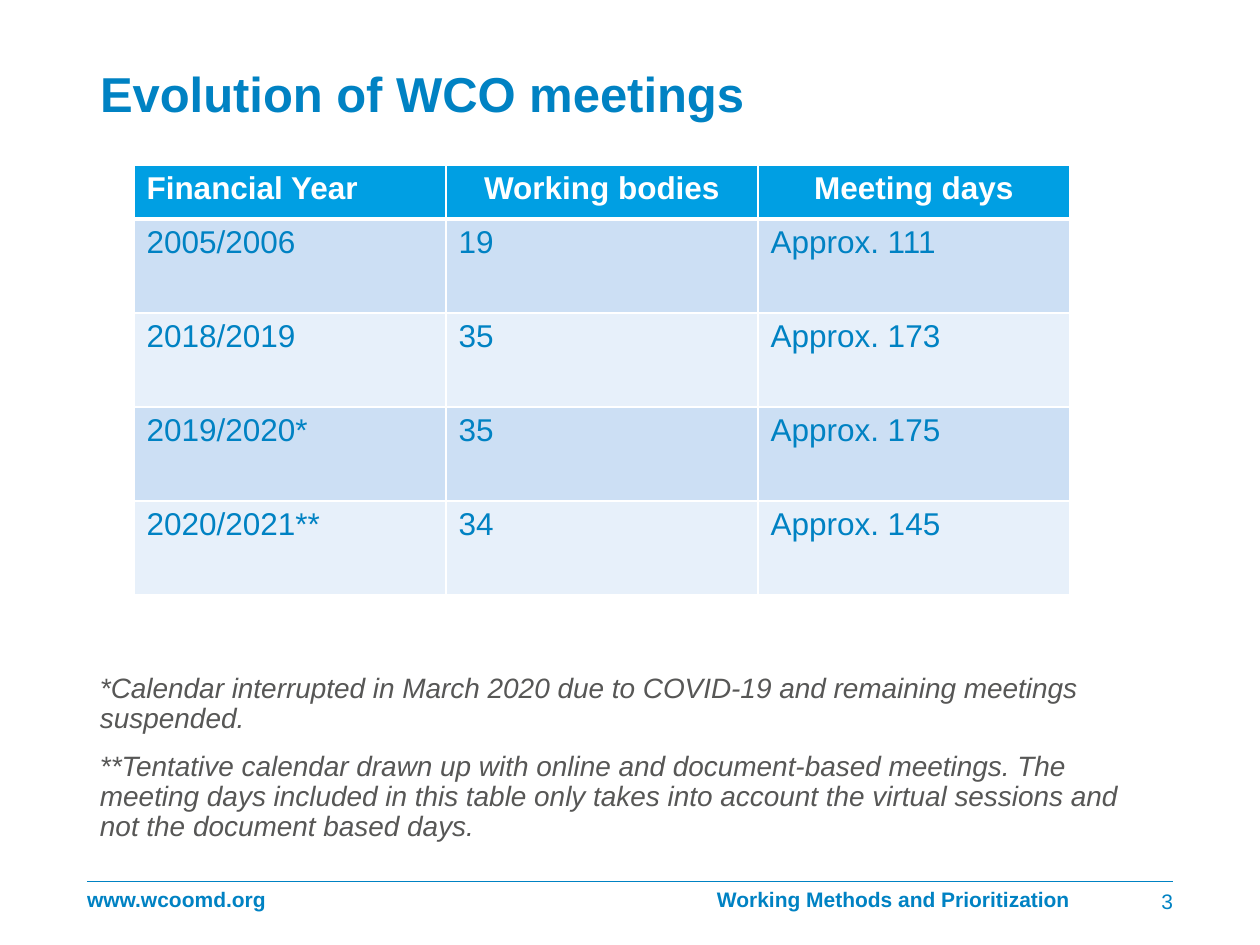
from lxml.etree import SubElement
from pptx import Presentation
from pptx.dml.color import RGBColor
from pptx.enum.shapes import MSO_CONNECTOR as Connector
from pptx.enum.text import MSO_ANCHOR as Anchor, MSO_AUTO_SIZE as AutoSize, PP_ALIGN as Align
from pptx.oxml.ns import qn
from pptx.util import Pt

SCALE = 914400 / 126
BLUE, HEADER, WHITE, GRAY = "0082C3", "009FE3", "FFFFFF", "575756"
BANDS = ["CCDFF4", "E7F0FA"]
ROWS = [
    ["Financial Year", "Working bodies", "Meeting days"],
    ["2005/2006", "19", "Approx. 111"],
    ["2018/2019", "35", "Approx. 173"],
    ["2019/2020*", "35", "Approx. 175"],
    ["2020/2021**", "34", "Approx. 145"],
]
NOTES = [
    "*Calendar interrupted in March 2020 due to COVID-19 and remaining meetings suspended.",
    "**Tentative calendar drawn up with online and document-based meetings. "
    "The meeting days included in this table only takes into account the virtual sessions "
    "and not the document based days.",
]


def px(length):
    """Turn pixels into EMU."""
    return round(length * SCALE)


def color(value):
    """Turn a hex string into a colour."""
    return RGBColor.from_string(value)


def set_values(target, values):
    """Set each attribute of the target from a dict."""
    for name, value in values.items():
        setattr(target, name, value)


def format_paragraph(paragraph, text, size, fill, align=Align.LEFT, **font):
    """Write and format one paragraph."""
    paragraph.text = text
    paragraph.alignment = align
    set_values(paragraph.font, {"name": "Arial", "size": Pt(size), "bold": False, **font})
    paragraph.font.color.rgb = color(fill)


def place_text(shape, box, lines, size, fill, anchor=Anchor.TOP, left=13, right=13,
               spacing=0.9, **style):
    """Place a text shape in its box and fill it with paragraphs."""
    set_values(shape, dict(zip(("left", "top", "width", "height"), map(px, box))))
    frame = shape.text_frame
    set_values(frame, {
        "word_wrap": True, "auto_size": AutoSize.NONE, "vertical_anchor": anchor,
        "margin_left": px(left), "margin_right": px(right),
        "margin_top": px(6), "margin_bottom": px(6),
    })
    for index, line in enumerate(lines):
        paragraph = frame.add_paragraph() if index else frame.paragraphs[0]
        set_values(paragraph, {"line_spacing": spacing, "space_before": Pt(10 if index else 0)})
        if shape.is_placeholder:
            properties = paragraph._p.get_or_add_pPr()
            properties.set("marL", "0")
            properties.set("indent", "0")
            SubElement(properties, qn("a:buNone"))
        format_paragraph(paragraph, line, size, fill, **style)


def add_text(slide, box, lines, size, fill, **style):
    """Add a text box to the slide."""
    place_text(slide.shapes.add_textbox(0, 0, 0, 0), box, lines, size, fill, **style)


def set_borders(cell, bottom):
    """Draw white borders round a cell."""
    properties = cell._tc.get_or_add_tcPr()
    for side, width in {"L": 1, "R": 1, "T": 1, "B": bottom}.items():
        border = SubElement(properties, qn(f"a:ln{side}"), w=str(Pt(width)))
        SubElement(SubElement(border, qn("a:solidFill")), qn("a:srgbClr"), val=WHITE)


def add_meetings_table(slide, box, header_height):
    """Add the table of meetings by financial year."""
    left, top, width, height = box
    table = slide.shapes.add_table(len(ROWS), len(ROWS[0]), *map(px, box)).table
    table.horz_banding = False
    for column in table.columns:
        column.width = px(width / len(ROWS[0]))
    body_height = (height - header_height) / (len(ROWS) - 1)
    for index, values in enumerate(ROWS):
        is_header = index == 0
        table.rows[index].height = px(header_height if is_header else body_height)
        for position, value in enumerate(values):
            cell = table.cell(index, position)
            set_borders(cell, 3 if is_header else 1)
            cell.fill.solid()
            cell.fill.fore_color.rgb = color(HEADER if is_header else BANDS[(index - 1) % 2])
            format_paragraph(
                cell.text_frame.paragraphs[0], value, 18, WHITE if is_header else BLUE,
                align=Align.CENTER if is_header and position else Align.LEFT, bold=is_header)


def add_footer(slide, box):
    """Add the rule, address, subject and slide number."""
    left, top, width, height = box
    rule = slide.shapes.add_connector(
        Connector.STRAIGHT, *map(px, (left, top + 5, left + width, top + 5)))
    rule.line.width = Pt(0.5)
    rule.line.color.rgb = color(BLUE)
    SubElement(rule._element.spPr, qn("a:effectLst"))
    add_text(slide, (left, top, 184, height), ["www.wcoomd.org"], 12, BLUE,
             anchor=Anchor.MIDDLE, left=0, right=0, bold=True)
    place_text(slide.placeholders[1], (left + 340, top, 643, height),
               ["Working Methods and Prioritization"], 12, BLUE,
               anchor=Anchor.MIDDLE, right=0, align=Align.RIGHT, bold=True)
    add_text(slide, (left + width - 81, top, 81, height), ["3"], 12, BLUE,
             anchor=Anchor.MIDDLE, right=0, spacing=1.0, align=Align.RIGHT)


def main():
    """Build and save the slide."""
    presentation = Presentation()
    set_values(presentation, {"slide_width": px(1260), "slide_height": px(945)})
    slide = presentation.slides.add_slide(presentation.slide_layouts[1])
    place_text(slide.shapes.title, (87, 64, 983, 111), ["Evolution of WCO meetings"],
               28, BLUE, bold=True)
    add_meetings_table(slide, (134, 165, 936, 430), 54)
    add_text(slide, (87, 668, 1086, 180), NOTES, 16, GRAY, italic=True)
    add_footer(slide, (87, 876, 1086, 50))
    presentation.save("out.pptx")


if __name__ == "__main__":
    main()
